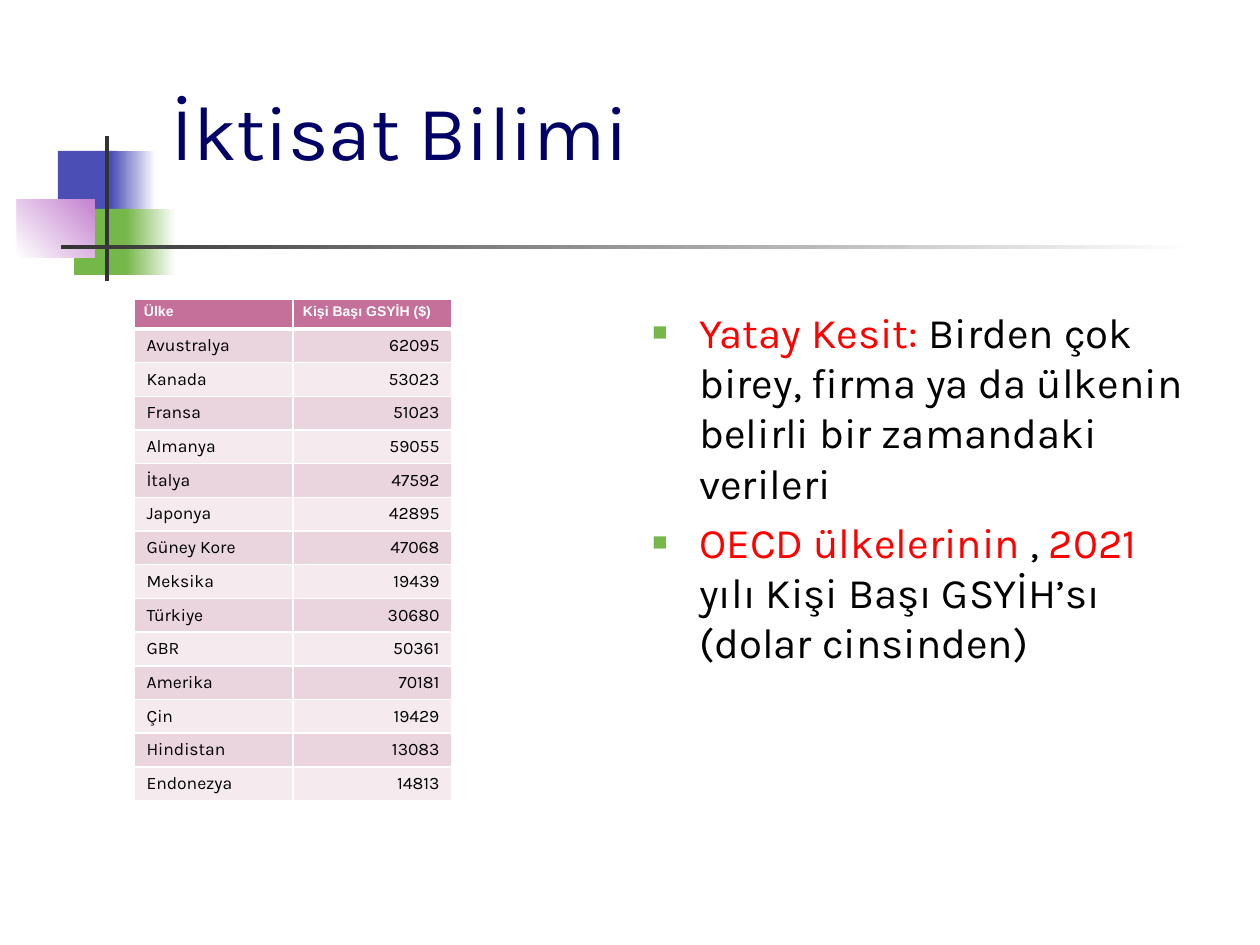
import pptx
import pptx.util
import pptx.dml.color
import pptx.enum.shapes
import pptx.enum.text
import pptx.oxml
import pptx.oxml.ns
import lxml.etree

PX = 914400 / 126
COLORS = {
    "blue": "4B4EB5", "green": "76B749", "purple": "C481CF", "dark": "333333",
    "white": "FFFFFF", "black": "000000", "navy": "000066", "red": "FF0000",
    "header": "C4709A", "band": "EAD5DE", "light": "F5EBEF",
}
ALIGN = pptx.enum.text.PP_ALIGN
ANCHOR = pptx.enum.text.MSO_ANCHOR
qn = pptx.oxml.ns.qn


def rgb(name):
    return pptx.dml.color.RGBColor.from_string(COLORS[name])


def add_run(p, text, color, size, font="Karla", bold=False):
    r = p.add_run()
    r.text = text
    for key, value in {"name": font, "size": pptx.util.Pt(size), "bold": bold}.items():
        setattr(r.font, key, value)
    r.font.color.rgb = rgb(color)


prs = pptx.Presentation()
prs.slide_width, prs.slide_height = pptx.util.Inches(10), pptx.util.Inches(7.5)
s = prs.slides.add_slide(prs.slide_layouts[5])

# Corner decoration: box in px, start colour, end colour, gradient angle
decoration = [
    ((58, 151, 60, 66), "blue", None, 0),
    ((111, 151, 45, 66), "blue", "white", 0),
    ((74, 209, 58, 66), "green", None, 0),
    ((126, 209, 50, 66), "green", "white", 0),
    ((17, 199, 78, 59), "white", "purple", 45),
    ((105, 136, 4, 145), "dark", None, 0),
    ((61, 245, 1134, 4), "dark", "white", 0),
]
for box, start, end, angle in decoration:
    sp = s.shapes.add_shape(pptx.enum.shapes.MSO_SHAPE.RECTANGLE,
                            *[round(v * PX) for v in box])
    sp.shadow.inherit = False
    sp.line.fill.background()
    if end:
        sp.fill.gradient()
        sp.fill.gradient_angle = angle
        for stop, color in zip(sp.fill.gradient_stops, (start, end)):
            stop.color.rgb = rgb(color)
    else:
        sp.fill.solid()
        sp.fill.fore_color.rgb = rgb(start)

# Title
title = s.shapes.title
for key, value in {"left": 159, "top": 29, "width": 1074, "height": 202}.items():
    setattr(title, key, round(value * PX))
tf = title.text_frame
tf.vertical_anchor = ANCHOR.MIDDLE
tf.auto_size = pptx.enum.text.MSO_AUTO_SIZE.NONE
tf.paragraphs[0].alignment = ALIGN.LEFT
add_run(tf.paragraphs[0], "İktisat Bilimi", "navy", 44)

# Bulleted text
bullets = [
    [("Yatay Kesit: ", "red"),
     ("Birden çok birey, firma ya da ülkenin belirli bir zamandaki verileri", "black")],
    [("OECD ülkelerinin ", "red"), (", ", "black"), ("2021", "red"),
     (" yılı Kişi Başı GSYİH’sı (dolar cinsinden)", "black")],
]
body = s.shapes.add_textbox(*[round(v * PX) for v in (640, 300, 557, 544)])
tf = body.text_frame
tf.word_wrap = True
for i, runs in enumerate(bullets):
    p = tf.paragraphs[0] if i == 0 else tf.add_paragraph()
    p.space_before = pptx.util.Pt(4.8)
    pPr = p._p.get_or_add_pPr()
    pPr.set("marL", str(round(47 * PX)))
    pPr.set("indent", str(round(-47 * PX)))
    color = lxml.etree.SubElement(pPr, qn("a:buClr"))
    lxml.etree.SubElement(color, qn("a:srgbClr"), val=COLORS["green"])
    lxml.etree.SubElement(pPr, qn("a:buSzPct"), val="60000")
    lxml.etree.SubElement(pPr, qn("a:buFont"), typeface="Arial")
    lxml.etree.SubElement(pPr, qn("a:buChar"), char="■")
    for text, name in runs:
        add_run(p, text, name, 24)

# GDP per capita table
rows = [
    ("Ülke", "Kişi Başı GSYİH ($)"),
    ("Avustralya", "62095"), ("Kanada", "53023"), ("Fransa", "51023"),
    ("Almanya", "59055"), ("İtalya", "47592"), ("Japonya", "42895"),
    ("Güney Kore", "47068"), ("Meksika", "19439"), ("Türkiye", "30680"),
    ("GBR", "50361"), ("Amerika", "70181"), ("Çin", "19429"),
    ("Hindistan", "13083"), ("Endonezya", "14813"),
]
HEADER_H, ROW_H, COL_W = 30, 33, 159
table_h = HEADER_H + ROW_H * (len(rows) - 1)
table = s.shapes.add_table(len(rows), 2, *[round(v * PX) for v in
                           (134, 299, 2 * COL_W, table_h)]).table
for col in table.columns:
    col.width = round(COL_W * PX)
for i, row in enumerate(rows):
    table.rows[i].height = round((ROW_H if i else HEADER_H) * PX)
    for j, text in enumerate(row):
        cell = table.cell(i, j)
        p = cell.text_frame.paragraphs[0]
        # White borders, thicker under the header
        tcPr = cell._tc.get_or_add_tcPr()
        for side in "LRTB":
            thick = (i, side) in ((0, "B"), (1, "T"))
            ln = lxml.etree.SubElement(tcPr, qn("a:ln" + side),
                                       w=str(pptx.util.Pt(3 if thick else 1)))
            fill = lxml.etree.SubElement(ln, qn("a:solidFill"))
            lxml.etree.SubElement(fill, qn("a:srgbClr"), val=COLORS["white"])
        cell.fill.solid()
        if i == 0:
            cell.fill.fore_color.rgb = rgb("header")
            for side, inset in {"left": 10, "right": 10, "top": 5, "bottom": 5}.items():
                setattr(cell, "margin_" + side, round(inset * PX))
            add_run(p, text, "white", 8, "Arial", True)
        else:
            cell.fill.fore_color.rgb = rgb("band" if i % 2 else "light")
            cell.vertical_anchor = ANCHOR.MIDDLE
            p.alignment = ALIGN.RIGHT if j else ALIGN.LEFT
            add_run(p, text, "black", 10)

prs.save("out.pptx")
